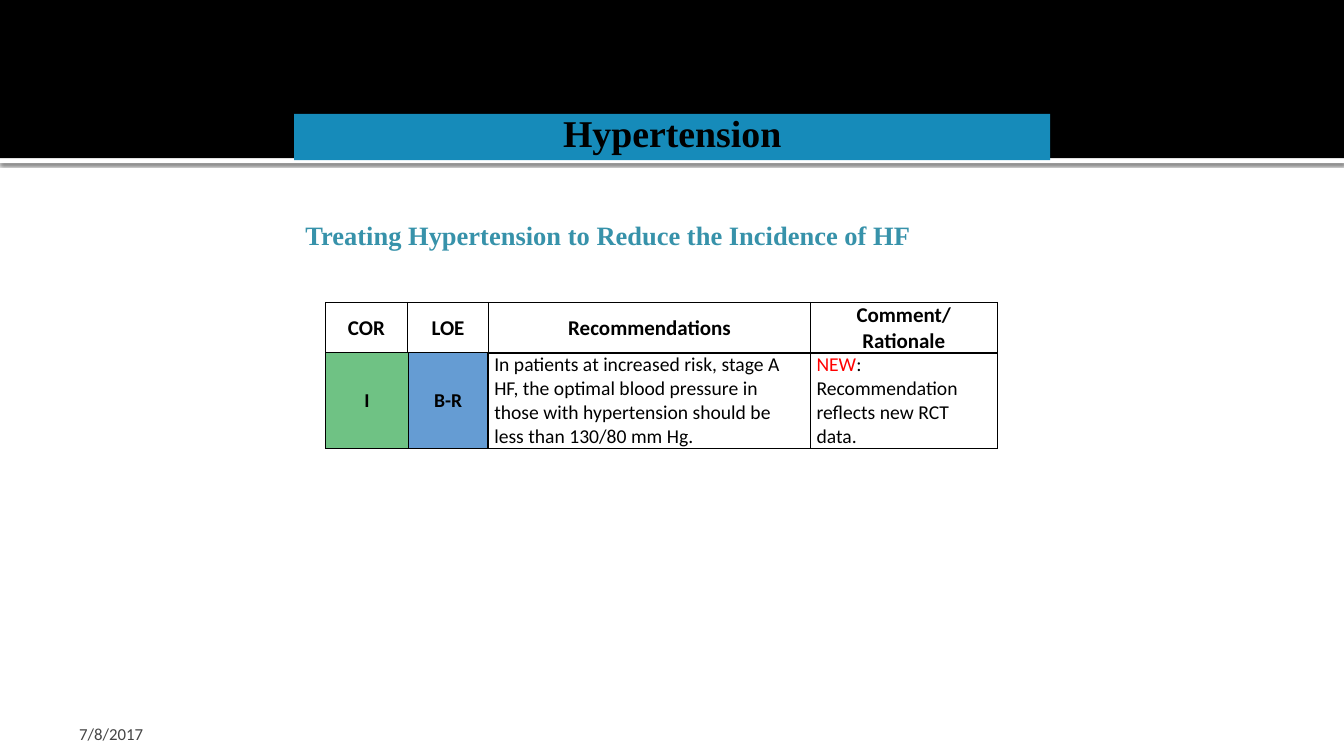
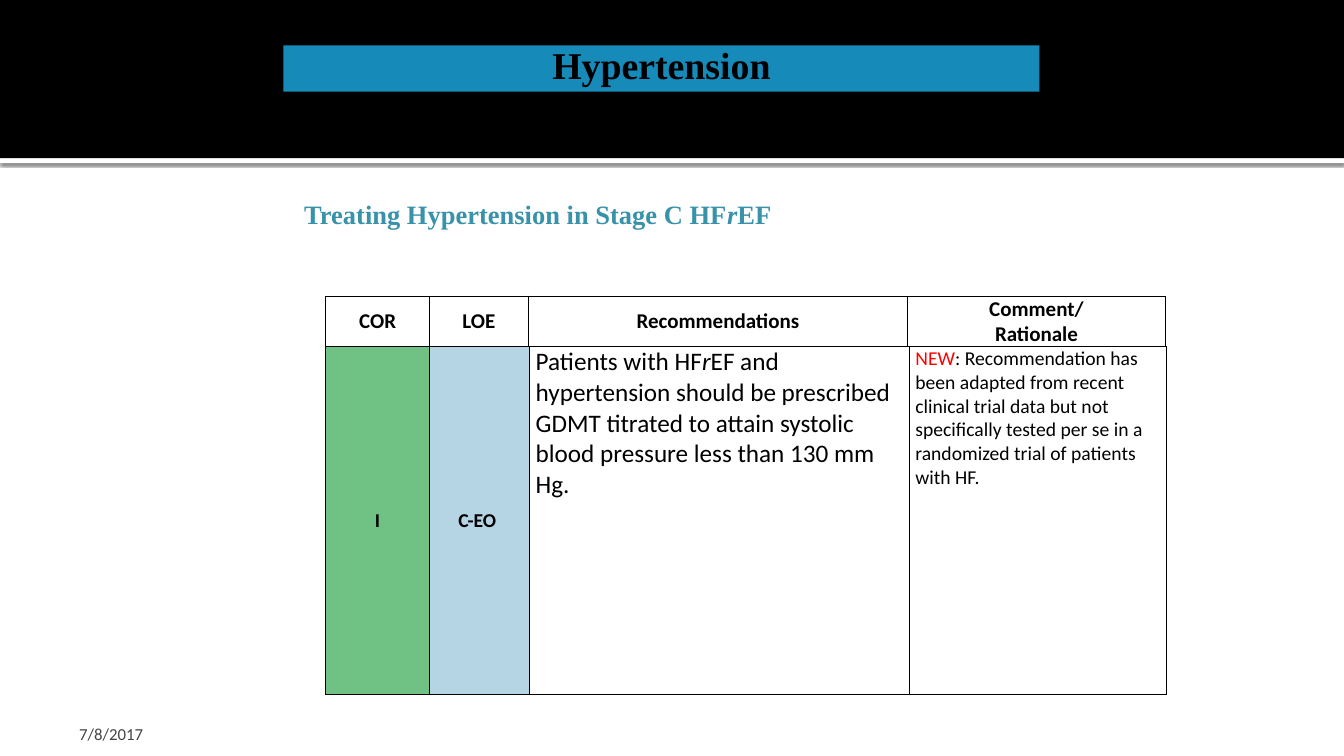
"""Build two slides of hypertension recommendations."""
from dataclasses import dataclass

from lxml import etree
from pptx import Presentation
from pptx.dml.color import RGBColor
from pptx.enum import shapes, text
from pptx.oxml import parse_xml
from pptx.oxml.ns import nsdecls, qn
from pptx.util import Pt


@dataclass(frozen=True)
class Theme:
    """Colours, fonts and type sizes."""
    black: str = "000000"
    white: str = "FFFFFF"
    banner: str = "168BBA"
    heading: str = "3792AA"
    footer: str = "454545"
    new: str = "FF0000"
    class_one: str = "6FC284"
    level_b: str = "659CD3"
    level_c: str = "B5D5E5"
    serif: str = "Times New Roman"
    sans: str = "Calibri"
    banner_size: float = 27
    heading_size: float = 18.9
    header_size: float = 15
    body_size: float = 14
    large_size: float = 18
    footer_size: float = 12


THEME = Theme()
WIDTH, HEIGHT = 960, 540
BAND_HEIGHT = 113
TABLE_LEFT, HEADER_HEIGHT = 232.6, 36
CELL_INSETS = (4.5, 0, 4.5, 0)
DATE = "7/8/2017"
HEADERS = [["COR"], ["LOE"], ["Recommendations"], ["Comment/", "Rationale"]]
STYLES = {"plain": {}, "italic": {"italic": True}, "new": {"color": THEME.new}}

SLIDES = [
    {
        "banner": ("Hypertension", 210.2, 81.4),
        "heading": (["Treating Hypertension to Reduce the Incidence of HF"], 211, 152.6),
        "table_top": 216,
        "header_columns": [58.3, 58.3, 229.7, 133.4],
        "body_columns": [59, 57, 230.2, 133.7],
        "body_height": 67,
        "level": ("B-R", THEME.level_b),
        "recommendation": ["In patients at increased risk, stage A HF, the optimal blood pressure "
                           "in those with hypertension should be less than 130/80 mm Hg."],
        "recommendation_size": THEME.body_size,
        "comment": [("NEW", "new"), ": Recommendation reflects new RCT data."],
    },
    {
        "banner": ("Hypertension", 202.5, 32.4),
        "heading": (["Treating Hypertension in Stage C HF", ("r", "italic"), "EF"], 210.2, 137.5),
        "table_top": 211.6,
        "header_columns": [74.2, 70.6, 270.9, 184.2],
        "body_columns": [74.2, 71.4, 271.2, 183.7],
        "body_height": 248.4,
        "level": ("C-EO ", THEME.level_c),
        "recommendation": ["Patients with HF", ("r", "italic"),
                           "EF and hypertension should be prescribed GDMT titrated to attain "
                           "systolic blood pressure less than 130 mm Hg."],
        "recommendation_size": THEME.large_size,
        "comment": [("NEW", "new"), ": Recommendation has been adapted from recent clinical trial "
                    "data but not specifically tested per se in a randomized trial of patients "
                    "with HF."],
    },
]


def style_font(font, name=None, size=None, color=None, bold=None, italic=None):
    if name:
        font.name = name
    if size:
        font.size = Pt(size)
    if color:
        font.color.rgb = RGBColor.from_string(color)
    if bold is not None:
        font.bold = bold
    if italic is not None:
        font.italic = italic


def write(frame, paragraphs, centered=False, spacing=None, **font):
    for index, runs in enumerate(paragraphs):
        paragraph = frame.add_paragraph() if index else frame.paragraphs[0]
        paragraph.alignment = text.PP_ALIGN.CENTER if centered else text.PP_ALIGN.LEFT
        paragraph.line_spacing = spacing
        style_font(paragraph.font, **font)
        for part in runs:
            words, style = (part, "plain") if isinstance(part, str) else part
            run = paragraph.add_run()
            run.text = words
            style_font(run.font, **STYLES[style])


def set_insets(target, insets):
    sides = ("margin_left", "margin_top", "margin_right", "margin_bottom")
    for side, inset in zip(sides, insets):
        setattr(target, side, Pt(inset))


def add_rectangle(slide, box, color):
    shape = slide.shapes.add_shape(shapes.MSO_SHAPE.RECTANGLE, *map(Pt, box))
    shape.shadow.inherit = False
    shape.fill.solid()
    shape.fill.fore_color.rgb = RGBColor.from_string(color)
    shape.line.fill.background()
    return shape


def add_bands(slide):
    rule = add_rectangle(slide, (0, BAND_HEIGHT, WIDTH, 3.6), THEME.white)
    rule._element.spPr.find(qn("a:effectLst")).append(parse_xml(
        f'<a:outerShdw {nsdecls("a")} blurRad="{Pt(2.5)}" dist="{Pt(0.8)}" dir="5400000" '
        f'algn="t" rotWithShape="0"><a:srgbClr val="{THEME.black}"><a:alpha val="60000"/>'
        '</a:srgbClr></a:outerShdw>'))
    add_rectangle(slide, (0, 0, WIDTH, BAND_HEIGHT), THEME.black)


def add_banner(slide, title, left, top):
    frame = add_rectangle(slide, (left, top, 540, 33.1), THEME.banner).text_frame
    frame.word_wrap = True
    frame.vertical_anchor = text.MSO_ANCHOR.TOP
    write(frame, [[title]], centered=True, spacing=0.8, name=THEME.serif,
          size=THEME.banner_size, color=THEME.black, bold=True)


def add_heading(slide, runs, left, top):
    frame = add_rectangle(slide, (left, top, 539.3, 30.2), THEME.white).text_frame
    frame.word_wrap = True
    frame.vertical_anchor = text.MSO_ANCHOR.MIDDLE
    set_insets(frame, (7.2, 3.6, 3.6, 3.6))
    write(frame, [runs], name=THEME.serif, size=THEME.heading_size,
          color=THEME.heading, bold=True)


def add_footer(slide):
    frame = slide.shapes.add_textbox(*map(Pt, (48, 509.8, 224, 21.6))).text_frame
    frame.word_wrap = True
    frame.vertical_anchor = text.MSO_ANCHOR.BOTTOM
    set_insets(frame, (8.6, 3.6, 3.6, 0))
    write(frame, [[DATE]], name=THEME.sans, size=THEME.footer_size, color=THEME.footer)


def add_borders(cell):
    properties = cell._tc.get_or_add_tcPr()
    for side in ("lnL", "lnR", "lnT", "lnB"):
        line = etree.SubElement(properties, qn(f"a:{side}"), w=str(Pt(1)))
        fill = etree.SubElement(line, qn("a:solidFill"))
        etree.SubElement(fill, qn("a:srgbClr"), val=THEME.black)


def add_row_table(slide, top, height, widths, cells):
    table = slide.shapes.add_table(1, len(widths), Pt(TABLE_LEFT), Pt(top),
                                   Pt(sum(widths)), Pt(height)).table
    table.first_row = table.horz_banding = False
    table.rows[0].height = Pt(height)
    for column, width in enumerate(widths):
        table.columns[column].width = Pt(width)
        paragraphs, size, label, color = cells[column]
        cell = table.cell(0, column)
        set_insets(cell, CELL_INSETS)
        cell.vertical_anchor = text.MSO_ANCHOR.MIDDLE if label else text.MSO_ANCHOR.TOP
        add_borders(cell)
        if color:
            cell.fill.solid()
            cell.fill.fore_color.rgb = RGBColor.from_string(color)
        else:
            cell.fill.background()
        write(cell.text_frame, paragraphs, centered=label, name=THEME.sans,
              size=size, color=THEME.black, bold=label)


def add_recommendation(slide, content):
    headers = [([[line] for line in lines], THEME.header_size, True, None) for lines in HEADERS]
    level, level_color = content["level"]
    body = [
        ([["I"]], THEME.body_size, True, THEME.class_one),
        ([[level]], THEME.body_size, True, level_color),
        ([content["recommendation"]], content["recommendation_size"], False, None),
        ([content["comment"]], THEME.body_size, False, None),
    ]
    top = content["table_top"]
    add_row_table(slide, top, HEADER_HEIGHT, content["header_columns"], headers)
    add_heading(slide, *content["heading"])
    add_row_table(slide, top + HEADER_HEIGHT, content["body_height"],
                  content["body_columns"], body)


def main():
    presentation = Presentation()
    presentation.slide_width, presentation.slide_height = Pt(WIDTH), Pt(HEIGHT)
    for content in SLIDES:
        slide = presentation.slides.add_slide(presentation.slide_layouts[6])
        add_bands(slide)
        add_banner(slide, *content["banner"])
        add_recommendation(slide, content)
        add_footer(slide)
    presentation.save("out.pptx")


if __name__ == "__main__":
    main()
